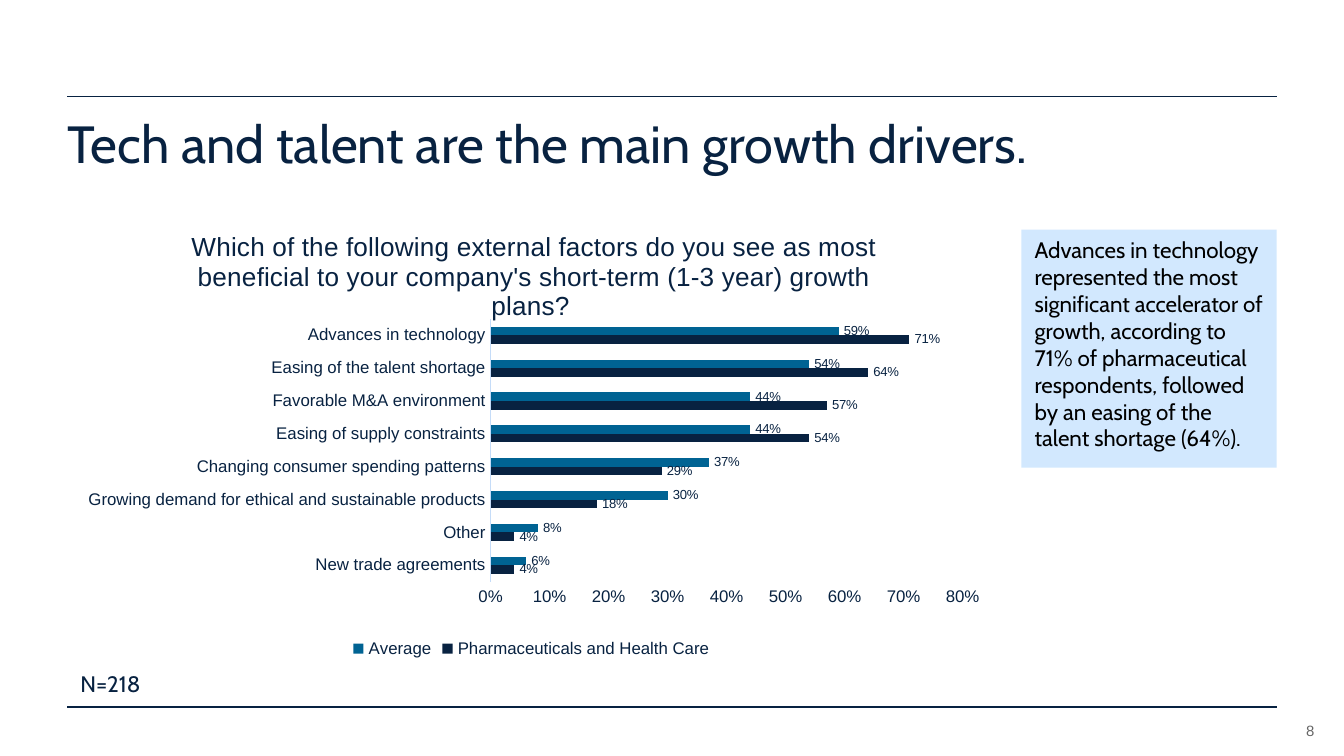
from lxml.etree import SubElement
from pptx import Presentation
from pptx.chart.data import CategoryChartData
from pptx.dml.color import RGBColor
from pptx.enum.chart import XL_CHART_TYPE, XL_LABEL_POSITION, XL_LEGEND_POSITION, XL_TICK_MARK
from pptx.enum.shapes import MSO_CONNECTOR, MSO_SHAPE
from pptx.enum.text import MSO_ANCHOR, MSO_AUTO_SIZE, PP_ALIGN
from pptx.oxml import parse_xml
from pptx.oxml.ns import nsdecls, qn
from pptx.util import Inches, Pt

NAVY = RGBColor(0x08, 0x22, 0x41)
BLUE = RGBColor(0x00, 0x63, 0x93)
PALE_BLUE = RGBColor(0xD2, 0xE8, 0xFE)
AXIS_BLUE = RGBColor(0xC5, 0xDC, 0xF8)
GREY = RGBColor(0x66, 0x66, 0x66)
BLACK = RGBColor(0, 0, 0)

COLUMNS = 20
LEFT, RIGHT = 1, 19

QUESTION = (
    "Which of the following external factors do you see as most beneficial "
    "to your company's short-term (1-3 year) growth plans? "
)
FINDING = (
    "Advances in technology represented the most significant accelerator of growth, "
    "according to 71% of pharmaceutical respondents, followed by an easing of the "
    "talent shortage (64%)."
)
FACTORS = [
    ("New trade agreements", 0.04, 0.06),
    ("Other", 0.04, 0.08),
    ("Growing demand for ethical and sustainable products", 0.18, 0.30),
    ("Changing consumer spending patterns", 0.29, 0.37),
    ("Easing of supply constraints", 0.54, 0.44),
    ("Favorable M&A environment", 0.57, 0.44),
    ("Easing of the talent shortage", 0.64, 0.54),
    ("Advances in technology", 0.71, 0.59),
]
SERIES = [("Pharmaceuticals and Health Care ", NAVY), ("Average", BLUE)]


def style_font(font, size, color=NAVY, name="Arial"):
    font.size = Pt(size)
    font.name = name
    font.bold = False
    font.color.rgb = color


def write_text(frame, text, size=12, color=NAVY, name="Cabin", align=PP_ALIGN.LEFT,
               anchor=MSO_ANCHOR.TOP, insets=(0.1, 0.05), spacing=None):
    frame.word_wrap = True
    frame.auto_size = MSO_AUTO_SIZE.NONE
    frame.vertical_anchor = anchor
    frame.margin_left = frame.margin_right = Inches(insets[0])
    frame.margin_top = frame.margin_bottom = Inches(insets[1])
    paragraph = frame.paragraphs[0]
    paragraph.alignment = align
    paragraph.line_spacing = spacing
    run = paragraph.add_run()
    run.text = text
    style_font(run.font, size, color, name)


def place_in_chart(element, index, modes, **percentages):
    for layout in element.findall(qn("c:layout")):
        element.remove(layout)
    layout = parse_xml(f"<c:layout {nsdecls('c')}><c:manualLayout/></c:layout>")
    shares = {tag: round(value / 100, 3) for tag, value in percentages.items()}
    for tag, value in {**modes, **shares}.items():
        SubElement(layout[0], qn(f"c:{tag}")).set("val", str(value))
    element.insert(index, layout)


class SlideBuilder:
    def __init__(self, presentation):
        self.slide = presentation.slides.add_slide(presentation.slide_layouts[5])
        self.column = presentation.slide_width / COLUMNS

    def cells(self, *lengths):
        return [round(length * self.column) for length in lengths]

    def rule(self, row):
        ends = self.cells(LEFT, row, RIGHT, row)
        line = self.slide.shapes.add_connector(MSO_CONNECTOR.STRAIGHT, *ends)
        line.line.color.rgb = NAVY
        line.line.width = Pt(0.75)
        SubElement(line._element.spPr, qn("a:effectLst"))

    def title(self, text, *area):
        title = self.slide.shapes.title
        title.left, title.top, title.width, title.height = self.cells(*area)
        write_text(title.text_frame, text, size=28, insets=(0, 0), spacing=0.9)

    def text(self, text, *area, **style):
        box = self.slide.shapes.add_textbox(*self.cells(*area))
        write_text(box.text_frame, text, **style)

    def callout(self, text, *area):
        shape = self.slide.shapes.add_shape(MSO_SHAPE.RECTANGLE, *self.cells(*area))
        shape.shadow.inherit = False
        shape.fill.solid()
        shape.fill.fore_color.rgb = PALE_BLUE
        shape.line.fill.background()
        write_text(shape.text_frame, text, color=BLACK)

    def bar_chart(self, question, *area):
        names, *columns = zip(*FACTORS)
        data = CategoryChartData(number_format="0%")
        data.categories = names
        for (name, _), values in zip(SERIES, columns):
            data.add_series(name, values)
        chart = self.slide.shapes.add_chart(
            XL_CHART_TYPE.BAR_CLUSTERED, *self.cells(*area), data).chart
        style_font(chart.font, 10)

        run = chart.chart_title.text_frame.paragraphs[0].add_run()
        run.text = question
        style_font(run.font, 14)
        edges = {"xMode": "edge", "yMode": "edge"}
        place_in_chart(chart.chart_title.element, 1, edges, x=12.8, y=3.7)
        place_in_chart(chart.element.find(".//" + qn("c:plotArea")), 0,
                       {"layoutTarget": "inner", **edges}, x=45.4, y=24.3, w=50.6, h=57.7)

        for axis in (chart.category_axis, chart.value_axis):
            axis.has_major_gridlines = False
            axis.major_tick_mark = axis.minor_tick_mark = XL_TICK_MARK.NONE
            style_font(axis.tick_labels.font, 9)
        chart.category_axis.format.line.color.rgb = AXIS_BLUE
        chart.category_axis.format.line.width = Pt(0.75)
        values = chart.value_axis
        values.format.line.fill.background()
        values.minimum_scale, values.maximum_scale, values.major_unit = 0, 0.8, 0.1
        values.tick_labels.number_format = "0%"
        values.tick_labels.number_format_is_linked = False

        chart.has_legend = True
        chart.legend.position = XL_LEGEND_POSITION.BOTTOM
        chart.legend.include_in_layout = False
        style_font(chart.legend.font, 9)

        plot = chart.plots[0]
        plot.gap_width = 182
        plot.overlap = 0
        plot.vary_by_categories = False
        for series, (_, color) in zip(plot.series, SERIES):
            series.format.fill.solid()
            series.format.fill.fore_color.rgb = color
            labels = series.data_labels
            labels.show_value = True
            labels.position = XL_LABEL_POSITION.OUTSIDE_END
            labels.number_format = "0%"
            labels.number_format_is_linked = False
            style_font(labels.font, 7)


def main():
    presentation = Presentation()
    presentation.slide_width = Inches(10)
    presentation.slide_height = presentation.slide_width * 9 // 16
    builder = SlideBuilder(presentation)
    builder.rule(1.44)
    builder.rule(10.52)
    builder.text("8", 18.62, 10.64, 0.94, 0.36, size=8, color=GREY, name="Arial",
                 align=PP_ALIGN.RIGHT, anchor=MSO_ANCHOR.BOTTOM, insets=(0, 0))
    builder.title("Tech and talent are the main growth drivers.", LEFT, 1.76, RIGHT - LEFT, 1.1)
    builder.callout(FINDING, 15.2, 3.42, RIGHT - 15.2, 3.54)
    builder.text("N=218", LEFT, 9.88, 3.3, 0.6)
    builder.bar_chart(QUESTION, LEFT, 3.1, 13.88, 6.78)
    presentation.save("out.pptx")


if __name__ == "__main__":
    main()
